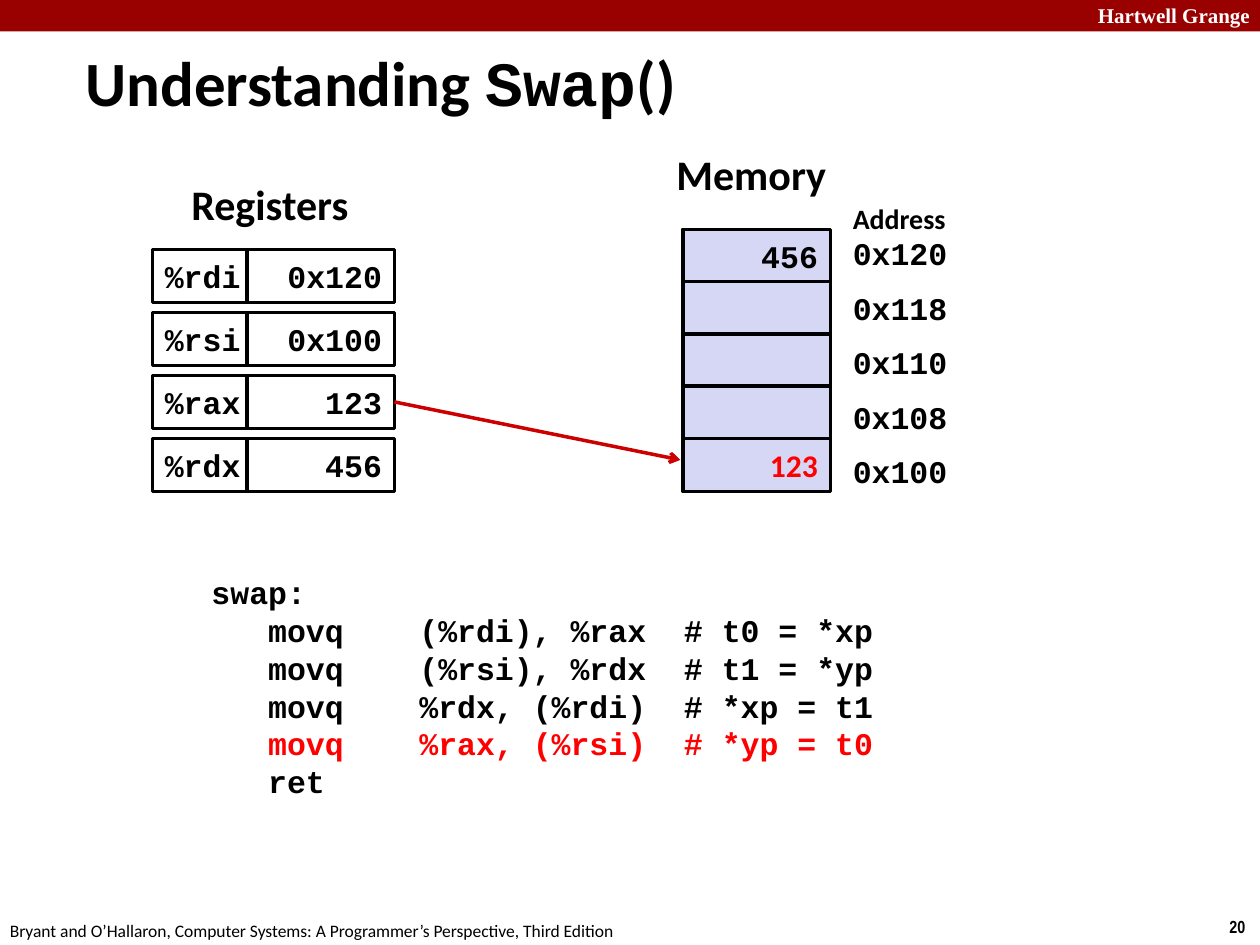
from lxml import etree
from pptx import Presentation
from pptx.dml.color import RGBColor
from pptx.enum.shapes import MSO_CONNECTOR, MSO_SHAPE
from pptx.enum.text import MSO_ANCHOR, PP_ALIGN
from pptx.oxml.ns import qn
from pptx.util import Inches, Pt

RECTANGLE = MSO_SHAPE.RECTANGLE
STRAIGHT = MSO_CONNECTOR.STRAIGHT
LEFT, RIGHT = PP_ALIGN.LEFT, PP_ALIGN.RIGHT
TOP, MIDDLE = MSO_ANCHOR.TOP, MSO_ANCHOR.MIDDLE

BLACK = RGBColor(0x00, 0x00, 0x00)
WHITE = RGBColor(0xFF, 0xFF, 0xFF)
RED = RGBColor(0xFF, 0x00, 0x00)
ARROW_RED = RGBColor(0xCC, 0x00, 0x00)
BANNER_RED = RGBColor(0x99, 0x00, 0x00)
LAVENDER = RGBColor(0xD6, 0xD6, 0xF5)

SANS, MONO = "Calibri", "Courier New"
CODE = {"name": MONO, "size": Pt(18), "bold": True}
HEADING = {"name": SANS, "size": Pt(24), "bold": True}
SUBHEADING = {"name": SANS, "size": Pt(16), "bold": True}
TITLE = {"name": SANS, "size": Pt(36), "bold": True}
TITLE_CODE = {**TITLE, "name": MONO}
BANNER = {"name": "Times New Roman", "size": Pt(12), "bold": True}
FOOTER = {"name": SANS, "size": Pt(10), "bold": False}
NUMBER = {"name": "Arial Narrow", "size": Pt(10), "bold": True}

CELL_HEIGHT = 0.42
REGISTER_LEFT, REGISTER_TOP, REGISTER_STEP = 1.21, 1.98, 0.5
NAME_WIDTH, VALUE_WIDTH = 0.75, 1.17
MEMORY_LEFT, MEMORY_TOP, MEMORY_STEP = 5.42, 1.82, 0.415
ADDRESS_LEFT, ADDRESS_TOP, ADDRESS_STEP = 6.67, 1.81, 0.4325
CODE_TABS = (0.45, 1.65, 3.75)

REGISTERS = [("%rdi", "0x120"), ("%rsi", "0x100"), ("%rax", "123"), ("%rdx", "456")]
MEMORY = [
    ("0x120", "456", CODE, BLACK),
    ("0x118", "", CODE, BLACK),
    ("0x110", "", CODE, BLACK),
    ("0x108", "", CODE, BLACK),
    ("0x100", "123", {**CODE, "name": SANS}, RED),
]
INSTRUCTIONS = [
    ("swap:", BLACK),
    ("\tmovq\t(%rdi), %rax\t# t0 = *xp", BLACK),
    ("\tmovq\t(%rsi), %rdx\t# t1 = *yp", BLACK),
    ("\tmovq\t%rdx, (%rdi)\t# *xp = t1", BLACK),
    ("\tmovq\t%rax, (%rsi)\t# *yp = t0", RED),
    ("\tret", BLACK),
]


def add_span(para, text, style, color=BLACK):
    """Append a formatted run to a paragraph."""
    span = para.add_run()
    span.text = text
    for name, value in style.items():
        setattr(span.font, name, value)
    span.font.color.rgb = color


def add_label(page, place, text, style, color=BLACK, wrap=False, align=LEFT, anchor=TOP):
    """Add a text box at place and return its first paragraph."""
    frame = page.shapes.add_textbox(*map(Inches, place)).text_frame
    frame.word_wrap = wrap
    frame.vertical_anchor = anchor
    para = frame.paragraphs[0]
    para.alignment = align
    add_span(para, text, style, color)
    return para


def add_box(page, place, fill, outlined=True):
    """Add a flat rectangle, with or without a black outline."""
    box = page.shapes.add_shape(RECTANGLE, *map(Inches, place))
    box.shadow.inherit = False
    box.fill.solid()
    box.fill.fore_color.rgb = fill
    if outlined:
        box.line.color.rgb = BLACK
        box.line.width = Pt(2)
    else:
        box.line.fill.background()
    return box


def add_cell(page, place, text, fill, align, style=CODE, color=BLACK):
    """Add an outlined cell holding one value."""
    frame = add_box(page, place, fill).text_frame
    frame.word_wrap = False
    frame.vertical_anchor = MIDDLE
    para = frame.paragraphs[0]
    para.alignment = align
    if text:
        add_span(para, text, style, color)


def add_registers(page):
    """Add the name and value cells of each register."""
    add_label(page, (1.42, 1.37, 1.48, 0.5), "Registers", HEADING)
    for row, (name, value) in enumerate(REGISTERS):
        top = REGISTER_TOP + row * REGISTER_STEP
        add_cell(page, (REGISTER_LEFT, top, NAME_WIDTH, CELL_HEIGHT), name, WHITE, LEFT)
        value_place = (REGISTER_LEFT + NAME_WIDTH, top, VALUE_WIDTH, CELL_HEIGHT)
        add_cell(page, value_place, value, WHITE, RIGHT)


def add_memory(page):
    """Add the memory column with its addresses."""
    add_label(page, (5.27, 1.13, 1.4, 0.5), "Memory", HEADING)
    add_label(page, (ADDRESS_LEFT, 1.55, 1.33, 0.37), "Address", SUBHEADING, wrap=True)
    for row, (address, value, style, color) in enumerate(MEMORY):
        place = (MEMORY_LEFT, MEMORY_TOP + row * MEMORY_STEP, VALUE_WIDTH, CELL_HEIGHT)
        add_cell(page, place, value, LAVENDER, RIGHT, style, color)
        address_top = ADDRESS_TOP + row * ADDRESS_STEP
        add_label(page, (ADDRESS_LEFT, address_top, 1.33, 0.4), address, CODE, wrap=True)


def add_arrow(page, start, end):
    """Add a red line with an open arrowhead at its end."""
    arrow = page.shapes.add_connector(STRAIGHT, *map(Inches, start + end))
    arrow.line.color.rgb = ARROW_RED
    arrow.line.width = Pt(2)
    etree.SubElement(arrow.line._get_or_add_ln(), qn("a:tailEnd"), type="arrow")
    etree.SubElement(arrow._element.spPr, qn("a:effectLst"))


def add_code(page):
    """Add the assembly listing, aligned on tab stops."""
    frame = page.shapes.add_textbox(*map(Inches, (1.58, 4.5, 6.42, 1.92))).text_frame
    frame.word_wrap = True
    for row, (text, color) in enumerate(INSTRUCTIONS):
        para = frame.add_paragraph() if row else frame.paragraphs[0]
        stops = etree.SubElement(para._p.get_or_add_pPr(), qn("a:tabLst"))
        for stop in CODE_TABS:
            etree.SubElement(stops, qn("a:tab"), pos=str(Inches(stop)), algn="l")
        add_span(para, text, CODE, color)


def add_frame(page):
    """Add the banner, footer, page number and title."""
    add_box(page, (0, 0, 10, 0.25), BANNER_RED, outlined=False)
    add_label(page, (8.52, -0.03, 1.5, 0.3), "Hartwell Grange", BANNER, WHITE, align=RIGHT)
    add_label(page, (9.66, 7.22, 0.34, 0.27), "20", NUMBER)
    citation = (
        "Bryant and O’Hallaron, Computer Systems: "
        "A Programmer’s Perspective, Third Edition"
    )
    add_label(page, (-0.02, 7.25, 5.08, 0.27), citation, FOOTER)
    title_place = (0.58, 0.33, 6.97, 0.63)
    title = add_label(page, title_place, "Understanding ", TITLE, wrap=True, anchor=MIDDLE)
    add_span(title, "Swap", TITLE_CODE)
    add_span(title, "()", TITLE)


def main():
    """Build the slide and save it."""
    deck = Presentation()
    deck.slide_width, deck.slide_height = Inches(10), Inches(7.5)
    page = deck.slides.add_slide(deck.slide_layouts[6])
    add_frame(page)
    add_registers(page)
    add_memory(page)
    add_arrow(page, (3.13, 3.19), (5.4, 3.65))
    add_code(page)
    deck.save("out.pptx")


if __name__ == "__main__":
    main()
